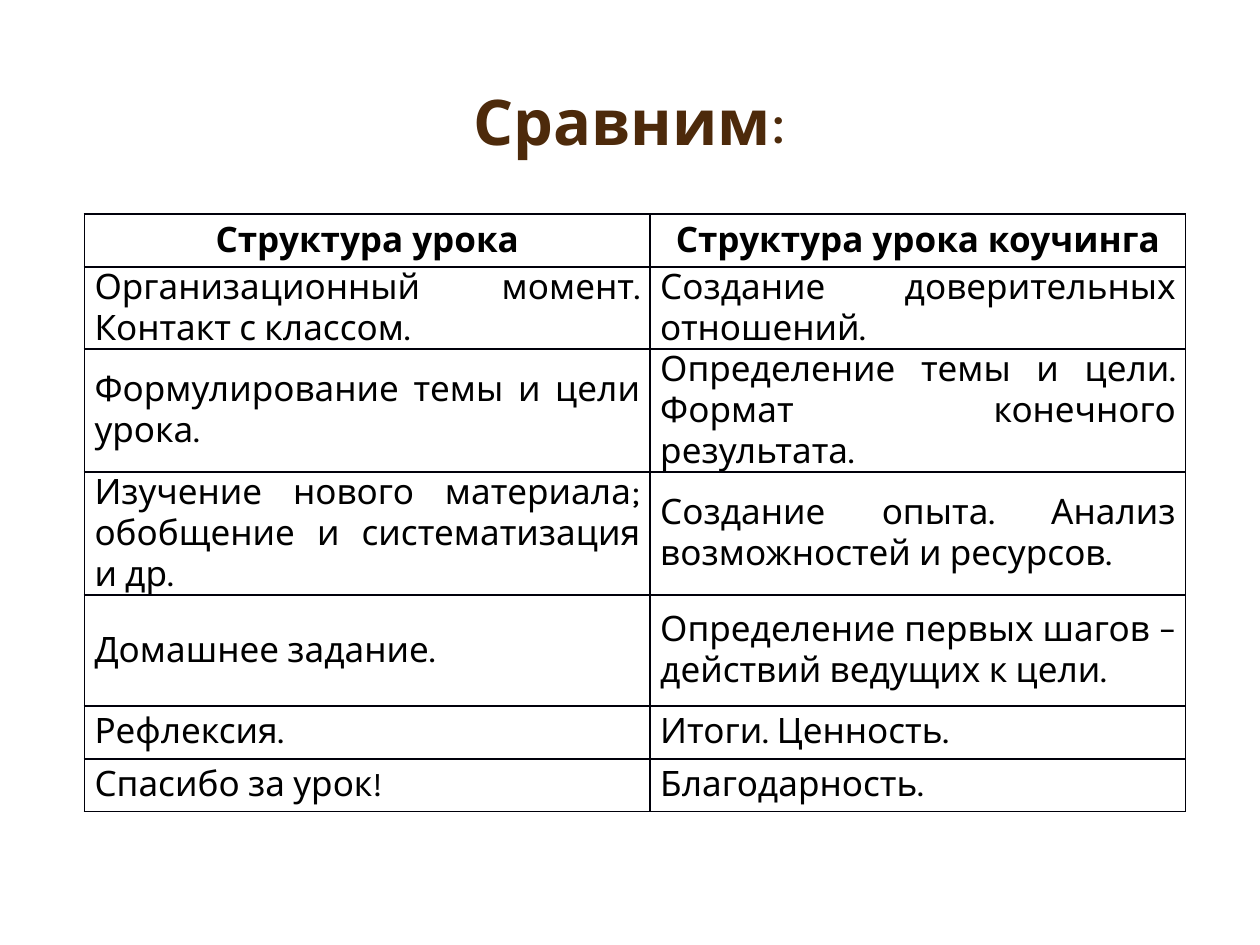
from lxml.etree import SubElement
from pptx import Presentation
from pptx.dml.color import RGBColor
from pptx.enum.text import MSO_ANCHOR, PP_ALIGN
from pptx.oxml.ns import qn
from pptx.util import Inches, Pt

FONT = "Karla"
BROWN = RGBColor(0x4D, 0x2A, 0x0B)
BLACK = RGBColor(0x00, 0x00, 0x00)
WHITE = RGBColor(0xFF, 0xFF, 0xFF)
BORDER = RGBColor(0x00, 0x00, 0x0A)

COLUMN_WIDTHS = [4.49, 4.25]
ROW_HEIGHTS = [0.42, 0.42, 0.88, 0.88, 0.88, 0.42, 0.42]
COMPARISON = [
    ("Структура урока", "Структура урока коучинга"),
    ("Организационный момент. Контакт с классом.",
     "Создание доверительных отношений."),
    ("Формулирование темы и цели урока.",
     "Определение темы и цели. Формат конечного результата."),
    ("Изучение нового материала; обобщение и систематизация и др. ",
     "Создание опыта. Анализ возможностей и ресурсов."),
    ("Домашнее задание.",
     "Определение первых шагов – действий ведущих к цели."),
    ("Рефлексия.", "Итоги. Ценность."),
    ("Спасибо за урок!", "Благодарность."),
]


def add_text(paragraph, text, size=20, color=BLACK, bold=False,
             align=PP_ALIGN.JUSTIFY):
    paragraph.alignment = align
    run = paragraph.add_run()
    run.text = text
    run.font.name = FONT
    run.font.size = Pt(size)
    run.font.bold = bold
    run.font.color.rgb = color


def add_borders(cell, color=BORDER, width=1):
    properties = cell._tc.get_or_add_tcPr()
    # Border lines must come before the cell fill
    for position, side in enumerate(("a:lnL", "a:lnR", "a:lnT", "a:lnB")):
        line = SubElement(properties, qn(side), w=str(Pt(width)))
        fill = SubElement(line, qn("a:solidFill"))
        SubElement(fill, qn("a:srgbClr"), val=str(color))
        properties.insert(position, line)


def add_title(slide):
    title = slide.shapes.title
    title.left, title.top = Inches(0.87), Inches(0.33)
    title.width, title.height = Inches(8.25), Inches(1.33)
    title.text_frame.vertical_anchor = MSO_ANCHOR.MIDDLE
    heading = title.text_frame.paragraphs[0]
    heading.line_spacing = 0.9
    for text, bold in (("Сравним", True), (":", False)):
        add_text(heading, text, size=36, color=BROWN, bold=bold,
                 align=PP_ALIGN.CENTER)


def fill_cell(cell, text, header):
    cell.vertical_anchor = MSO_ANCHOR.MIDDLE
    cell.margin_left = cell.margin_right = Inches(0.08)
    cell.margin_top = cell.margin_bottom = 0
    cell.fill.solid()
    cell.fill.fore_color.rgb = WHITE
    add_borders(cell)
    add_text(cell.text_frame.paragraphs[0], text, bold=header,
             align=PP_ALIGN.CENTER if header else PP_ALIGN.JUSTIFY)


def add_comparison(slide):
    height = Inches(4.82)
    frame = slide.shapes.add_table(
        len(COMPARISON), len(COLUMN_WIDTHS), Inches(0.67), Inches(1.7),
        Inches(sum(COLUMN_WIDTHS)), height)
    table = frame.table
    for column, width in zip(table.columns, COLUMN_WIDTHS):
        column.width = Inches(width)
    for row, row_height in zip(table.rows, ROW_HEIGHTS):
        row.height = Inches(row_height)
    frame.height = height
    for row_index, texts in enumerate(COMPARISON):
        for column_index, text in enumerate(texts):
            fill_cell(table.cell(row_index, column_index), text,
                      header=row_index == 0)


def main():
    presentation = Presentation()
    presentation.slide_width = Inches(10)
    presentation.slide_height = Inches(7.5)
    slide = presentation.slides.add_slide(presentation.slide_layouts[5])
    slide.background.fill.solid()
    slide.background.fill.fore_color.rgb = WHITE
    add_title(slide)
    add_comparison(slide)
    presentation.save("out.pptx")


if __name__ == "__main__":
    main()
